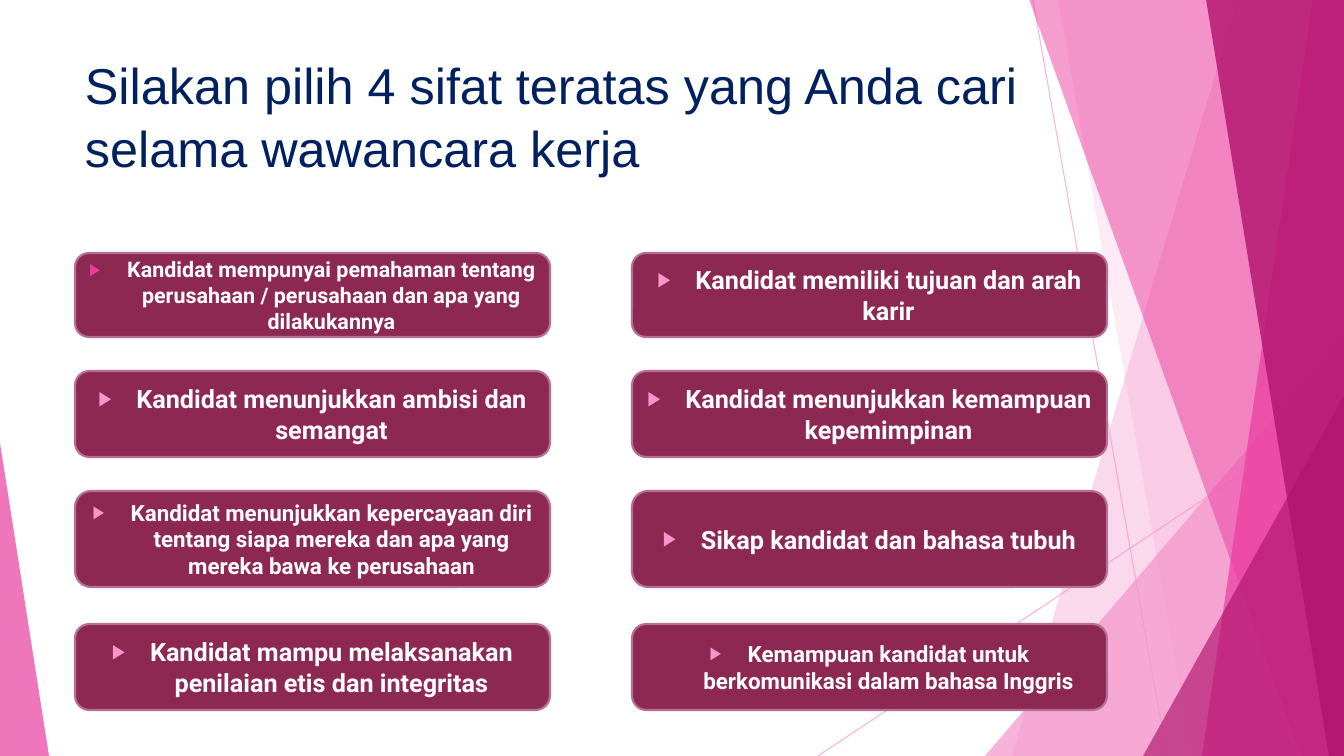
from lxml.etree import SubElement
from pptx import Presentation
from pptx.dml.color import RGBColor
from pptx.enum.shapes import MSO_CONNECTOR as Connector, MSO_SHAPE as Shape
from pptx.enum.text import MSO_ANCHOR as Anchor, PP_ALIGN as Align
from pptx.oxml.ns import qn
from pptx.util import Emu, Pt

COLORS = {
    "light": "F496CB", "pink": "EB3D9F", "magenta": "B2136D",
    "card": "8D2853", "border": "B56F96", "title": "002060", "white": "FFFFFF",
}
WIDTH, HEIGHT = 1344, 756
INDENT = 38


def px(value):
    return Emu(round(value * 914400 / 100.8))


def rgb(name):
    return RGBColor.from_string(COLORS[name])


def set_opacity(color_parent, percent):
    for color in color_parent.iter(qn("a:srgbClr")):
        SubElement(color, qn("a:alpha"), val=str(percent * 1000))


def add_bullet(paragraph, color):
    """Hanging triangle bullet at 80 % of the text size."""
    properties = paragraph._p.get_or_add_pPr()
    properties.set("marL", str(px(INDENT)))
    properties.set("indent", str(px(-INDENT)))
    bullet_color = SubElement(properties, qn("a:buClr"))
    SubElement(bullet_color, qn("a:srgbClr"), val=COLORS[color])
    SubElement(properties, qn("a:buSzPct"), val="80000")
    SubElement(properties, qn("a:buFont"), typeface="Arial")
    SubElement(properties, qn("a:buChar"), char="▶")


def write(shape, text, font, size, color, bold=False, align=Align.LEFT,
          anchor=Anchor.TOP, before=0, line_spacing=None, bullet=None):
    frame = shape.text_frame
    frame.word_wrap = True
    frame.vertical_anchor = anchor
    paragraph = frame.paragraphs[0]
    paragraph.alignment = align
    paragraph.space_before = Pt(before)
    paragraph.line_spacing = line_spacing
    if bullet:
        add_bullet(paragraph, bullet)
    run = paragraph.add_run()
    run.text = text
    run.font.name = font
    run.font.size = Pt(size)
    run.font.bold = bold
    run.font.color.rgb = rgb(color)


class SlideBuilder:
    def __init__(self, slide):
        self.shapes = slide.shapes

    def line(self, start, end, color, opacity):
        line = self.shapes.add_connector(
            Connector.STRAIGHT, *map(px, start), *map(px, end))
        line.line.color.rgb = rgb(color)
        line.line.width = Pt(0.75)
        properties = line._element.spPr
        set_opacity(properties, opacity)
        SubElement(properties, qn("a:effectLst"))

    def paint(self, shape, color, opacity):
        shape.shadow.inherit = False
        shape.fill.solid()
        shape.fill.fore_color.rgb = rgb(color)
        shape.line.fill.background()
        set_opacity(shape._element.spPr, opacity)

    def band(self, top, bottom, color, opacity):
        """Full-height band from a slanted left edge to the right slide edge."""
        builder = self.shapes.build_freeform(px(top), px(-1), scale=1.0)
        corners = [(WIDTH, -1), (WIDTH, HEIGHT), (bottom, HEIGHT)]
        builder.add_line_segments([(px(x), px(y)) for x, y in corners])
        self.paint(builder.convert_to_shape(), color, opacity)

    def corner(self, left, top, width, apex, color, opacity):
        """Triangle standing on the bottom slide edge."""
        shape = self.shapes.add_shape(
            Shape.ISOSCELES_TRIANGLE, *map(px, (left, top, width, HEIGHT - top)))
        shape.adjustments[0] = apex
        self.paint(shape, color, opacity)

    def title(self, box, text):
        shape = self.shapes.add_textbox(*map(px, box))
        write(shape, text, "Arial", 36, "title", line_spacing=1.05)

    def card(self, box, text, size, bullet):
        shape = self.shapes.add_shape(Shape.ROUNDED_RECTANGLE, *map(px, box))
        shape.shadow.inherit = False
        shape.fill.solid()
        shape.fill.fore_color.rgb = rgb("card")
        shape.line.color.rgb = rgb("border")
        shape.line.width = Pt(1.5)
        write(shape, text, "Roboto", size, "white", bold=True, align=Align.CENTER,
              anchor=Anchor.MIDDLE, before=10, bullet=bullet)


CARD_LEFTS, CARD_WIDTH = (75, 632), 475
CARD_ROWS = [
    (253, 84, [("Kandidat mempunyai pemahaman tentang perusahaan / perusahaan "
                "dan apa yang dilakukannya", 15.3, "pink"),
               ("Kandidat memiliki tujuan dan arah karir", 18, "light")]),
    (371, 86, [("Kandidat menunjukkan ambisi dan semangat", 18, "light"),
               ("Kandidat menunjukkan kemampuan kepemimpinan", 18, "light")]),
    (491, 96, [("Kandidat menunjukkan kepercayaan diri tentang siapa mereka "
                "dan apa yang mereka bawa ke perusahaan", 16, "light"),
               ("Sikap kandidat dan bahasa tubuh", 18, "light")]),
    (624, 86, [("Kandidat mampu melaksanakan penilaian etis dan integritas",
                18, "light"),
               ("Kemampuan kandidat untuk berkomunikasi dalam bahasa Inggris",
                16, "light")]),
]


def main():
    presentation = Presentation()
    presentation.slide_width, presentation.slide_height = px(WIDTH), px(HEIGHT)
    slide = presentation.slides.add_slide(presentation.slide_layouts[6])
    builder = SlideBuilder(slide)

    builder.line((1033, 0), (1167, HEIGHT), "light", 70)
    builder.line((WIDTH, 406), (818, HEIGHT), "light", 70)
    builder.band(1238, 1012, "light", 36)
    builder.band(1058, 1192, "light", 20)
    builder.corner(985, 336, 359, 1, "light", 72)
    builder.band(1029, 1301, "pink", 50)
    builder.band(1313, 1202, "pink", 70)
    builder.band(1206, 1329, "magenta", 80)
    builder.corner(1143, 396, 201, 1, "magenta", 66)
    builder.corner(0, 443, 49, 0, "pink", 70)

    builder.title((75, 46, 1032, 145),
                  "Silakan pilih 4 sifat teratas yang Anda cari selama wawancara kerja")
    for top, height, cards in CARD_ROWS:
        for left, (text, size, bullet) in zip(CARD_LEFTS, cards):
            builder.card((left, top, CARD_WIDTH, height), text, size, bullet)

    presentation.save("out.pptx")


if __name__ == "__main__":
    main()
